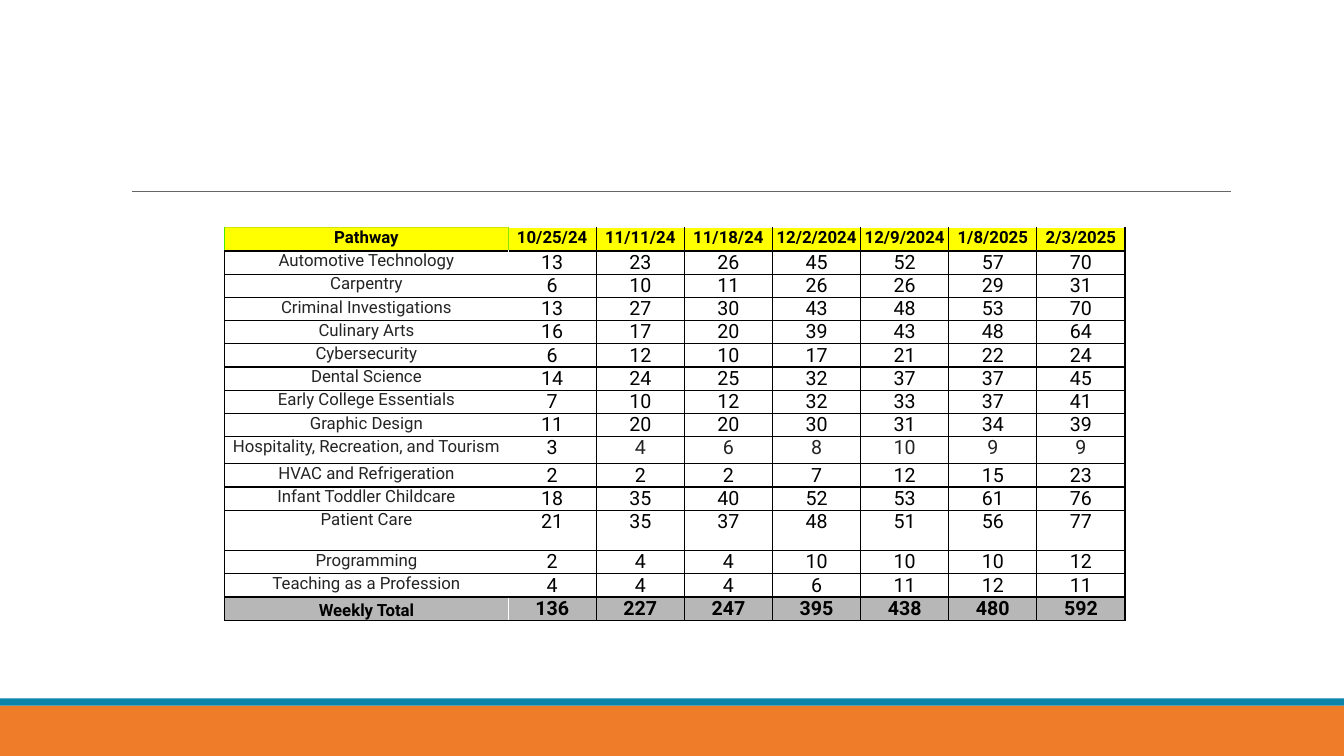
from lxml.etree import SubElement
from pptx import Presentation
from pptx.dml.color import RGBColor
from pptx.enum.shapes import MSO_CONNECTOR, MSO_SHAPE
from pptx.enum.text import MSO_ANCHOR, PP_ALIGN
from pptx.oxml.ns import qn
from pptx.util import Inches, Pt

COLORS = {
    "orange": "EE7C29", "teal": "0D85AB", "rule": "666666",
    "header": "FFFF00", "total": "B7B7B7", "white": "FFFFFF",
    "black": "000000", "ink": "242424",
    "green": "48E905", "olive": "D0E505", "lime": "88E505",
}
FONT = "Roboto"
DATES = ["10/25/24", "11/11/24", "11/18/24", "12/2/2024", "12/9/2024", "1/8/2025", "2/3/2025"]
ENROLLMENT = {
    "Automotive Technology": [13, 23, 26, 45, 52, 57, 70],
    "Carpentry": [6, 10, 11, 26, 26, 29, 31],
    "Criminal Investigations": [13, 27, 30, 43, 48, 53, 70],
    "Culinary Arts": [16, 17, 20, 39, 43, 48, 64],
    "Cybersecurity": [6, 12, 10, 17, 21, 22, 24],
    "Dental Science": [14, 24, 25, 32, 37, 37, 45],
    "Early College Essentials": [7, 10, 12, 32, 33, 37, 41],
    "Graphic Design": [11, 20, 20, 30, 31, 34, 39],
    "Hospitality, Recreation, and Tourism": [3, 4, 6, 8, 10, 9, 9],
    "HVAC and Refrigeration": [2, 2, 2, 7, 12, 15, 23],
    "Infant Toddler Childcare": [18, 35, 40, 52, 53, 61, 76],
    "Patient Care": [21, 35, 37, 48, 51, 56, 77],
    "Programming": [2, 4, 4, 10, 10, 10, 12],
    "Teaching as a Profession": [4, 4, 4, 6, 11, 12, 11],
}
ROW_HEIGHT = 0.23
TALL_ROWS = {"Hospitality, Recreation, and Tourism": 0.27, "Patient Care": 0.4}
TABLE_WIDTH, PATHWAY_WIDTH = 8.93, 2.81


def rgb(name):
    """Return the palette colour of that name."""
    return RGBColor.from_string(COLORS[name])


def write_text(frame, text, size=14, color="black", bold=False):
    """Put one centred, formatted run in a text frame."""
    paragraph = frame.paragraphs[0]
    paragraph.alignment = PP_ALIGN.CENTER
    run = paragraph.add_run()
    run.text = text
    run.font.name = FONT
    run.font.size = Pt(size)
    run.font.bold = bold
    run.font.color.rgb = rgb(color)


def add_band(slide, top, height, color):
    """Draw a full-width footer band."""
    band = slide.shapes.add_shape(
        MSO_SHAPE.RECTANGLE, 0, Inches(top), Inches(13.33), Inches(height))
    band.shadow.inherit = False
    band.fill.solid()
    band.fill.fore_color.rgb = rgb(color)
    band.line.fill.background()


def add_title_rule(slide):
    """Draw the thin line below the title area."""
    rule = slide.shapes.add_connector(
        MSO_CONNECTOR.STRAIGHT, Inches(1.31), Inches(1.9), Inches(12.21), Inches(1.9))
    rule.line.color.rgb = rgb("rule")
    rule.line.width = Pt(0.75)
    SubElement(rule._element.spPr, qn("a:effectLst"))


def set_borders(cell, **sides):
    """Give a cell 1 pt borders, black unless a side names a colour."""
    properties = cell._tc.get_or_add_tcPr()
    for side in "LRTB":
        line = SubElement(properties, qn(f"a:ln{side}"), w=str(Pt(1)))
        fill = SubElement(line, qn("a:solidFill"))
        SubElement(fill, qn("a:srgbClr"), val=COLORS[sides.get(side, "black")])


def border_colors(column, is_header):
    """Return the borders of a cell that are not black."""
    divider = "lime" if is_header else "white"
    sides = {0: {"R": divider}, 1: {"L": divider}}.get(column, {})
    if is_header:
        sides["T"] = "white" if column else "olive"
        if column == 0:
            sides["L"] = "green"
    return sides


def fill_row(table, row, values, fill="white", bold=False, is_header=False, is_total=False):
    """Fill and format one table row."""
    for column, value in enumerate(values):
        cell = table.cell(row, column)
        cell.margin_left = cell.margin_right = Inches(0.07 if column < 2 else 0)
        cell.margin_top = cell.margin_bottom = 0
        cell.vertical_anchor = MSO_ANCHOR.BOTTOM if is_total and column < 2 else MSO_ANCHOR.TOP
        set_borders(cell, **border_colors(column, is_header))
        cell.fill.solid()
        cell.fill.fore_color.rgb = rgb(fill)
        dark_grey = not bold and (column == 0 or column > 1 and values[0].startswith("Hospitality"))
        write_text(cell.text_frame, str(value), bold=bold,
                   size=12 if is_header or column == 0 else 14,
                   color="ink" if dark_grey else "black")


def add_enrollment_table(slide):
    """Build the table of pathway counts by date."""
    heights = [ROW_HEIGHT, *(TALL_ROWS.get(name, ROW_HEIGHT) for name in ENROLLMENT), ROW_HEIGHT]
    table = slide.shapes.add_table(
        len(heights), len(DATES) + 1, Inches(2.23), Inches(2.26),
        Inches(TABLE_WIDTH), Inches(sum(heights))).table
    table.first_row = table.horz_banding = False
    for row, height in zip(table.rows, heights):
        row.height = Inches(height)
    date_width = (TABLE_WIDTH - PATHWAY_WIDTH) / len(DATES)
    for index, column in enumerate(table.columns):
        column.width = Inches(date_width if index else PATHWAY_WIDTH)

    fill_row(table, 0, ["Pathway", *DATES], fill="header", bold=True, is_header=True)
    for row, (pathway, counts) in enumerate(ENROLLMENT.items(), start=1):
        fill_row(table, row, [pathway, *counts])
    totals = [sum(counts) for counts in zip(*ENROLLMENT.values())]
    fill_row(table, len(heights) - 1, ["Weekly Total", *totals],
             fill="total", bold=True, is_total=True)


def main():
    """Build and save the slide."""
    deck = Presentation()
    deck.slide_width, deck.slide_height = Inches(13.33), Inches(7.5)
    slide = deck.slides.add_slide(deck.slide_layouts[6])
    add_band(slide, 7, 0.5, "orange")
    add_band(slide, 6.93, 0.07, "teal")
    add_title_rule(slide)
    add_enrollment_table(slide)
    deck.save("out.pptx")


if __name__ == "__main__":
    main()
